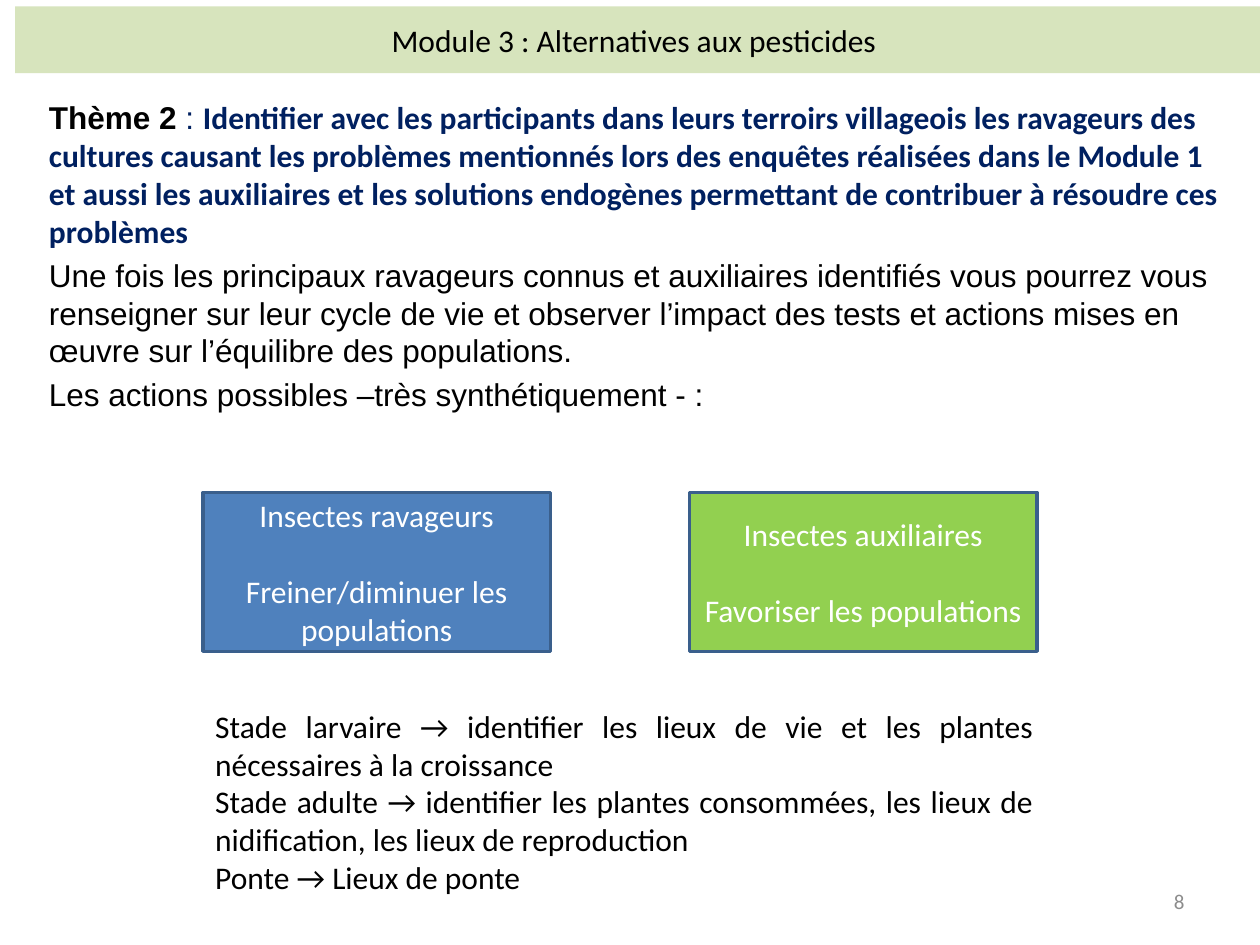
from dataclasses import dataclass

from pptx import Presentation
from pptx import util as u
from pptx.dml import color
from pptx.enum import shapes, text

Pt = u.Pt


@dataclass(frozen=True)
class Theme:
    """Colours, fonts and type sizes of the slide."""
    banner: str = "D7E4BD"
    pest: str = "4F81BD"
    helper: str = "92D050"
    outline: str = "3A5F8C"
    ink: str = "000000"
    navy: str = "002060"
    white: str = "FFFFFF"
    grey: str = "8C8C8C"
    main: str = "Calibri"
    alt: str = "Arial"
    body: int = 18
    small: int = 12


THEME = Theme()


def rgb(value):
    """Turn a hex string into a colour."""
    return color.RGBColor.from_string(value)


def write(frame, paragraphs, align="LEFT", anchor="TOP", size=THEME.body,
          font=THEME.main, ink=THEME.ink, before=0, gap=0):
    """Fill a frame; a paragraph is a string or a list of (words, overrides)."""
    frame.word_wrap = True
    frame.vertical_anchor = getattr(text.MSO_ANCHOR, anchor)
    for index, content in enumerate(paragraphs):
        paragraph = frame.paragraphs[0] if index == 0 else frame.add_paragraph()
        paragraph.alignment = getattr(text.PP_ALIGN, align)
        paragraph.space_before = Pt(gap if index else before)
        runs = [(content, {})] if isinstance(content, str) else content
        for words, changes in runs:
            run = paragraph.add_run()
            run.text = words
            run.font.size = Pt(size)
            run.font.name = changes.get("font", font)
            run.font.bold = changes.get("bold", False)
            run.font.color.rgb = rgb(changes.get("ink", ink))


def add_text(slide, box, paragraphs, **style):
    """Place a text box."""
    label = slide.shapes.add_textbox(*map(Pt, box))
    write(label.text_frame, paragraphs, **style)


def add_panel(slide, box, fill, paragraphs, outline=None, **style):
    """Place a filled rectangle with centred text."""
    panel = slide.shapes.add_shape(shapes.MSO_SHAPE.RECTANGLE, *map(Pt, box))
    panel.shadow.inherit = False
    panel.fill.solid()
    panel.fill.fore_color.rgb = rgb(fill)
    if outline:
        panel.line.color.rgb = rgb(outline)
        panel.line.width = Pt(2)
    else:
        panel.line.fill.background()
    write(panel.text_frame, paragraphs, align="CENTER", anchor="MIDDLE", **style)


def add_banner(slide, box):
    """Place the module title."""
    add_panel(slide, box, THEME.banner, ["Module 3 : Alternatives aux pesticides "])


def add_introduction(slide, box):
    """Place the topic and its explanation."""
    topic = [
        ("Thème 2 ", {"bold": True}),
        (": ", {"ink": THEME.navy}),
        ("Identifier avec les participants dans leurs terroirs villageois les "
         "ravageurs des cultures causant les problèmes mentionnés lors des "
         "enquêtes réalisées dans le Module 1 et aussi les auxiliaires et les "
         "solutions endogènes permettant de contribuer à résoudre ces problèmes",
         {"font": THEME.main, "ink": THEME.navy, "bold": True}),
    ]
    add_text(slide, box, [
        topic,
        "Une fois les principaux ravageurs connus et auxiliaires identifiés vous "
        "pourrez vous renseigner sur leur cycle de vie et observer l’impact des "
        "tests et actions mises en œuvre sur l’équilibre des populations.",
        "Les actions possibles –très synthétiquement - :",
    ], font=THEME.alt, before=3.6, gap=3.6)


def add_actions(slide, box):
    """Place the two insect groups at the ends of the box."""
    left, top, width, height = box
    panel_width = 198.7
    groups = [
        (THEME.pest, "Insectes ravageurs", "Freiner/diminuer les populations"),
        (THEME.helper, "Insectes auxiliaires", "Favoriser les populations"),
    ]
    step = width - panel_width
    for index, (fill, group, action) in enumerate(groups):
        add_panel(slide, (left + index * step, top, panel_width, height), fill,
                  [group, action], outline=THEME.outline, ink=THEME.white, gap=22)


def add_stages(slide, box):
    """Place the notes on the life stages."""
    add_text(slide, box, [
        "Stade larvaire → identifier les lieux de vie et les plantes nécessaires "
        "à la croissance",
        "Stade adulte → identifier les plantes consommées, les lieux de "
        "nidification, les lieux de reproduction",
        "Ponte → Lieux de ponte",
    ], align="JUSTIFY")


def add_page_number(slide, box):
    """Place the page number."""
    add_text(slide, box, ["8"], align="RIGHT", anchor="MIDDLE",
             size=THEME.small, ink=THEME.grey)


def main():
    """Build and save the slide."""
    deck = Presentation()
    deck.slide_width, deck.slide_height = Pt(720), Pt(540)
    slide = deck.slides.add_slide(deck.slide_layouts[6])
    add_banner(slide, (8.6, 3.6, 711.4, 38.2))
    add_page_number(slide, (516, 500.5, 168, 28.8))
    add_introduction(slide, (20.9, 52.6, 686.2, 487.4))
    add_actions(slide, (115.9, 281.5, 476.7, 90.7))
    add_stages(slide, (115.9, 400.3, 481.7, 116.6))
    deck.save("out.pptx")


if __name__ == "__main__":
    main()
